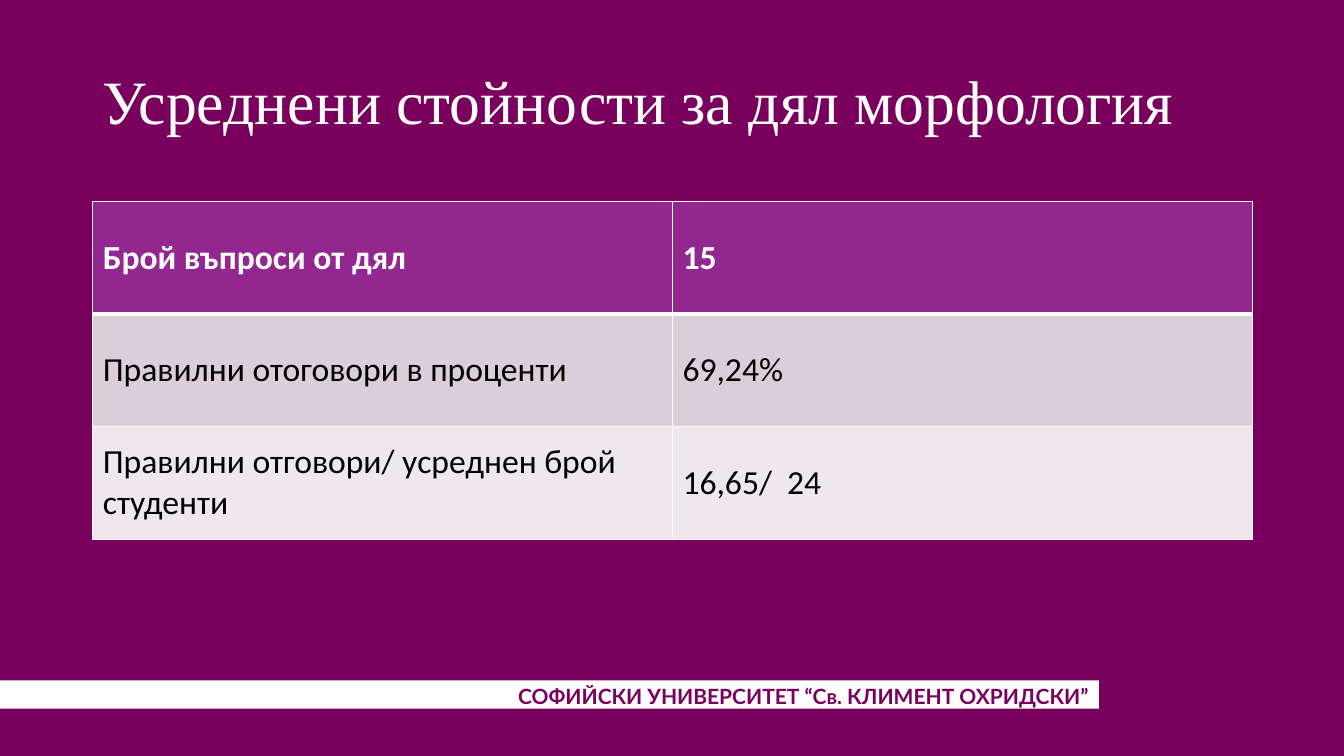
import pptx
import pptx.util
import pptx.dml.color
import pptx.enum.shapes
import pptx.enum.text
import pptx.oxml
from pptx.util import Inches

PURPLE, WHITE, BLACK = "7A005E", "FFFFFF", "000000"
ALIGN = pptx.enum.text.PP_ALIGN
MIDDLE = pptx.enum.text.MSO_ANCHOR.MIDDLE


def rgb(value):
    return pptx.dml.color.RGBColor.from_string(value)


def write(frame, text, size, font, color, bold=False, align=ALIGN.LEFT, spacing=1.0):
    frame.word_wrap = True
    paragraph = frame.paragraphs[0]
    paragraph.alignment = align
    paragraph.line_spacing = spacing
    run = paragraph.add_run()
    run.text = text
    run.font.size = pptx.util.Pt(size)
    run.font.name = font
    run.font.bold = bold
    run.font.color.rgb = rgb(color)


presentation = pptx.Presentation()
presentation.slide_width = Inches(13.33)
presentation.slide_height = Inches(7.5)
slide = presentation.slides.add_slide(presentation.slide_layouts[6])
slide.background.fill.solid()
slide.background.fill.fore_color.rgb = rgb(PURPLE)

# University footer
footer_band = slide.shapes.add_shape(
    pptx.enum.shapes.MSO_SHAPE.RECTANGLE, 0, Inches(6.75), Inches(10.9), Inches(0.28))
footer_band.shadow.inherit = False
footer_band.fill.solid()
footer_band.fill.fore_color.rgb = rgb(WHITE)
footer_band.line.fill.background()

university = slide.shapes.add_textbox(Inches(3.54), Inches(6.73), Inches(7.36), Inches(0.35))
write(university.text_frame, "СОФИЙСКИ УНИВЕРСИТЕТ “Св. КЛИМЕНТ ОХРИДСКИ”",
      15, "Lato", PURPLE, bold=True, align=ALIGN.RIGHT)

# Title
title = slide.shapes.add_textbox(Inches(0.92), Inches(0.31), Inches(11.5), Inches(1.45))
title.text_frame.vertical_anchor = MIDDLE
write(title.text_frame, "Усреднени стойности за дял морфология",
      44, "Times New Roman", WHITE, spacing=0.9)

# Table of averages: two labels, fill and text colour per row
averages = [
    ("Брой въпроси от дял", "15", "92278F", WHITE),
    ("Правилни отоговори в проценти", "69,24%", "DCCDDB", BLACK),
    ("Правилни отговори/ усреднен брой студенти", "16,65/  24", "EEE8EE", BLACK),
]
table = slide.shapes.add_table(
    len(averages), 2, Inches(0.92), Inches(2), Inches(11.5), Inches(3.35)).table

for row, (label, value, fill, color) in enumerate(averages):
    for column, text in enumerate((label, value)):
        cell = table.cell(row, column)
        cell.vertical_anchor = MIDDLE
        write(cell.text_frame, text, 24, "Calibri", color, bold=row == 0)

        # Borders, thicker under the header; they precede the fill in the cell XML
        widths = {"lnL": 1, "lnR": 1, "lnT": 3 if row == 1 else 1, "lnB": 3 if row == 0 else 1}
        for side, width in widths.items():
            cell._tc.get_or_add_tcPr().append(pptx.oxml.parse_xml(
                f'<a:{side} xmlns:a="http://schemas.openxmlformats.org/drawingml/2006/main"'
                f' w="{pptx.util.Pt(width)}"><a:solidFill><a:srgbClr val="{WHITE}"/>'
                f'</a:solidFill></a:{side}>'))
        cell.fill.solid()
        cell.fill.fore_color.rgb = rgb(fill)

presentation.save("out.pptx")
